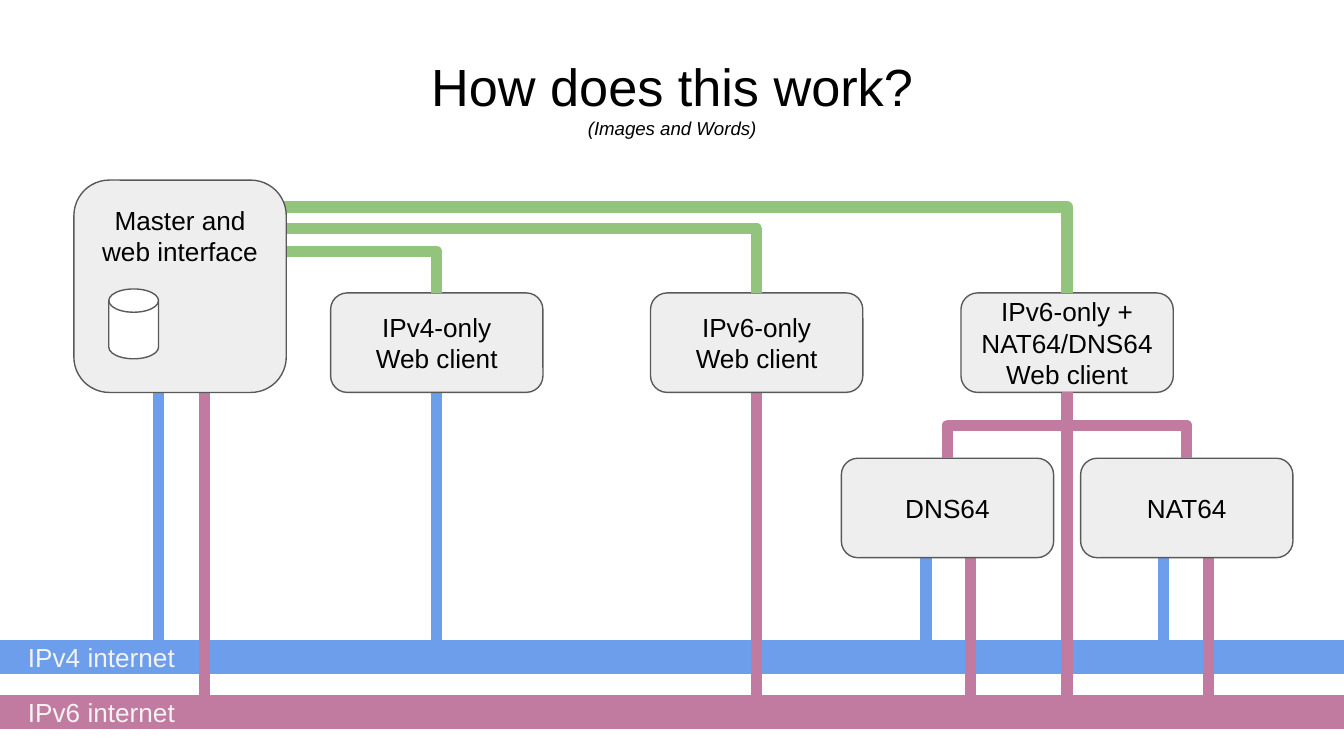
from lxml import etree
from pptx import Presentation
from pptx.dml.color import RGBColor
from pptx.enum.shapes import MSO_CONNECTOR, MSO_SHAPE
from pptx.enum.text import MSO_ANCHOR, PP_ALIGN
from pptx.oxml.ns import qn
from pptx.util import Inches, Pt

STRAIGHT, ELBOW = MSO_CONNECTOR.STRAIGHT, MSO_CONNECTOR.ELBOW
ROUNDED = MSO_SHAPE.FLOWCHART_ALTERNATE_PROCESS
DISK = MSO_SHAPE.FLOWCHART_MAGNETIC_DISK
TOP, MIDDLE = MSO_ANCHOR.TOP, MSO_ANCHOR.MIDDLE
LEFT, CENTER = PP_ALIGN.LEFT, PP_ALIGN.CENTER

COLORS = {
    "ipv4": "6D9EEB", "ipv6": "C27BA0", "control": "93C47D",
    "box": "EEEEEE", "border": "595959", "disk": "FFFFFF",
    "text": "000000", "label": "F3F3F3",
}
WIDTH = 10
HEIGHT = WIDTH * 9 / 16
BOX_W, BOX_H = 1.58, 0.74
COLS = {"master": 1.34, "ipv4": 3.25, "ipv6": 5.63, "nat": 7.94,
        "dns64": 7.05, "nat64": 8.83}
ROWS = {"master": 1.34, "client": 2.18, "gateway": 3.41, "ipv4": 4.89, "ipv6": 5.3}
CLIENT_BOTTOM = ROWS["client"] + BOX_H
GATEWAY_BOTTOM = ROWS["gateway"] + BOX_H


def rgb(name):
    return RGBColor.from_string(COLORS[name])


def write(p, text, size=14, color="text", italic=False, align=CENTER):
    p.alignment = align
    r = p.add_run()
    r.text = text
    r.font.name, r.font.size, r.font.italic = "Arial", Pt(size), italic
    r.font.color.rgb = rgb(color)


def fill_frame(tf, lines, anchor=TOP, **fmt):
    tf.word_wrap = True
    tf.vertical_anchor = anchor
    tf.margin_left = tf.margin_right = tf.margin_top = tf.margin_bottom = Inches(0.1)
    for i, text in enumerate(lines):
        write(tf.paragraphs[0] if i == 0 else tf.add_paragraph(), text, **fmt)


def add_box(s, kind, x, y, w, h, fill, lines=(), anchor=MIDDLE):
    sp = s.shapes.add_shape(kind, Inches(x), Inches(y), Inches(w), Inches(h))
    sp.shadow.inherit = False
    sp.fill.solid()
    sp.fill.fore_color.rgb = rgb(fill)
    sp.line.color.rgb = rgb("border")
    sp.line.width = Pt(0.75)
    fill_frame(sp.text_frame, lines, anchor)


def add_node(s, col, row, lines, height=BOX_H, anchor=MIDDLE):
    add_box(s, ROUNDED, COLS[col] - BOX_W / 2, ROWS[row], BOX_W, height,
            "box", lines, anchor)


def add_line(s, x1, y1, x2, y2, color, width=6, kind=STRAIGHT):
    c = s.shapes.add_connector(kind, Inches(x1), Inches(y1), Inches(x2), Inches(y2))
    c.line.color.rgb = rgb(color)
    c.line.width = Pt(width)
    etree.SubElement(c._element.spPr, qn("a:effectLst"))
    return c


def add_corner(s, x1, y1, x2, y2, color):
    c = add_line(s, x1, y1, x2, y2, color, kind=ELBOW)
    c._element.spPr.find(qn("a:prstGeom")).set("prst", "bentConnector2")


def add_branch(s, x1, y1, x2, y2, color):
    cx, cy = (x1 + x2) / 2, (y1 + y2) / 2
    half_w, half_h = (y2 - y1) / 2, abs(x2 - x1) / 2
    side, degrees = (-1, 270) if x2 > x1 else (1, 90)
    c = add_line(s, cx - side * half_w, cy - half_h,
                 cx + side * half_w, cy + half_h, color, kind=ELBOW)
    c._element.spPr.find(qn("a:xfrm")).set("rot", str(degrees * 60000))


def add_network(s, name):
    add_line(s, -0.01, ROWS[name], WIDTH + 0.01, ROWS[name], name, width=18)


def add_label(s, name, text):
    sp = s.shapes.add_textbox(Inches(0.11), Inches(ROWS[name] - 0.22),
                              Inches(3.87), Inches(0.45))
    fill_frame(sp.text_frame, [text], color="label", align=LEFT)


def add_title(s):
    sp = s.shapes.title
    sp.left, sp.top = Inches(0.34), Inches(0.3)
    sp.width, sp.height = Inches(9.32), Inches(0.63)
    tf = sp.text_frame
    fill_frame(tf, ["How does this work?"], size=28)
    write(tf.add_paragraph(), "(Images and Words)", size=10, italic=True)


def main():
    prs = Presentation()
    prs.slide_width, prs.slide_height = Inches(WIDTH), Inches(HEIGHT)
    s = prs.slides.add_slide(prs.slide_layouts[5])
    add_title(s)

    add_network(s, "ipv4")
    for x, y, name in [
        (1.52, CLIENT_BOTTOM, "ipv6"), (COLS["nat"], CLIENT_BOTTOM, "ipv6"),
        (8.99, GATEWAY_BOTTOM, "ipv6"), (7.22, GATEWAY_BOTTOM, "ipv6"),
        (6.89, GATEWAY_BOTTOM, "ipv4"), (8.66, GATEWAY_BOTTOM, "ipv4"),
        (COLS["ipv4"], CLIENT_BOTTOM, "ipv4"), (1.18, CLIENT_BOTTOM, "ipv4"),
        (COLS["ipv6"], CLIENT_BOTTOM, "ipv6"),
    ]:
        add_line(s, x, y, x, ROWS[name], name)

    add_node(s, "ipv4", "client", ["IPv4-only", "Web client"])
    add_node(s, "ipv6", "client", ["IPv6-only", "Web client"])
    add_node(s, "nat", "client", ["IPv6-only + NAT64/DNS64", "Web client"])
    add_node(s, "dns64", "gateway", ["DNS64"])
    add_node(s, "nat64", "gateway", ["NAT64"])

    for col, y in [("ipv4", 1.87), ("ipv6", 1.7), ("nat", 1.54)]:
        add_corner(s, 2.07, y, COLS[col], ROWS["client"], "control")
    for col in ("dns64", "nat64"):
        add_branch(s, COLS["nat"], CLIENT_BOTTOM, COLS[col], ROWS["gateway"], "ipv6")

    add_network(s, "ipv6")
    add_label(s, "ipv4", "IPv4 internet")
    add_label(s, "ipv6", "IPv6 internet")

    add_node(s, "master", "master", ["Master and web interface"],
             height=BOX_W, anchor=TOP)
    add_box(s, DISK, 0.81, 2.15, 0.37, 0.52, "disk")
    prs.save("out.pptx")


if __name__ == "__main__":
    main()
